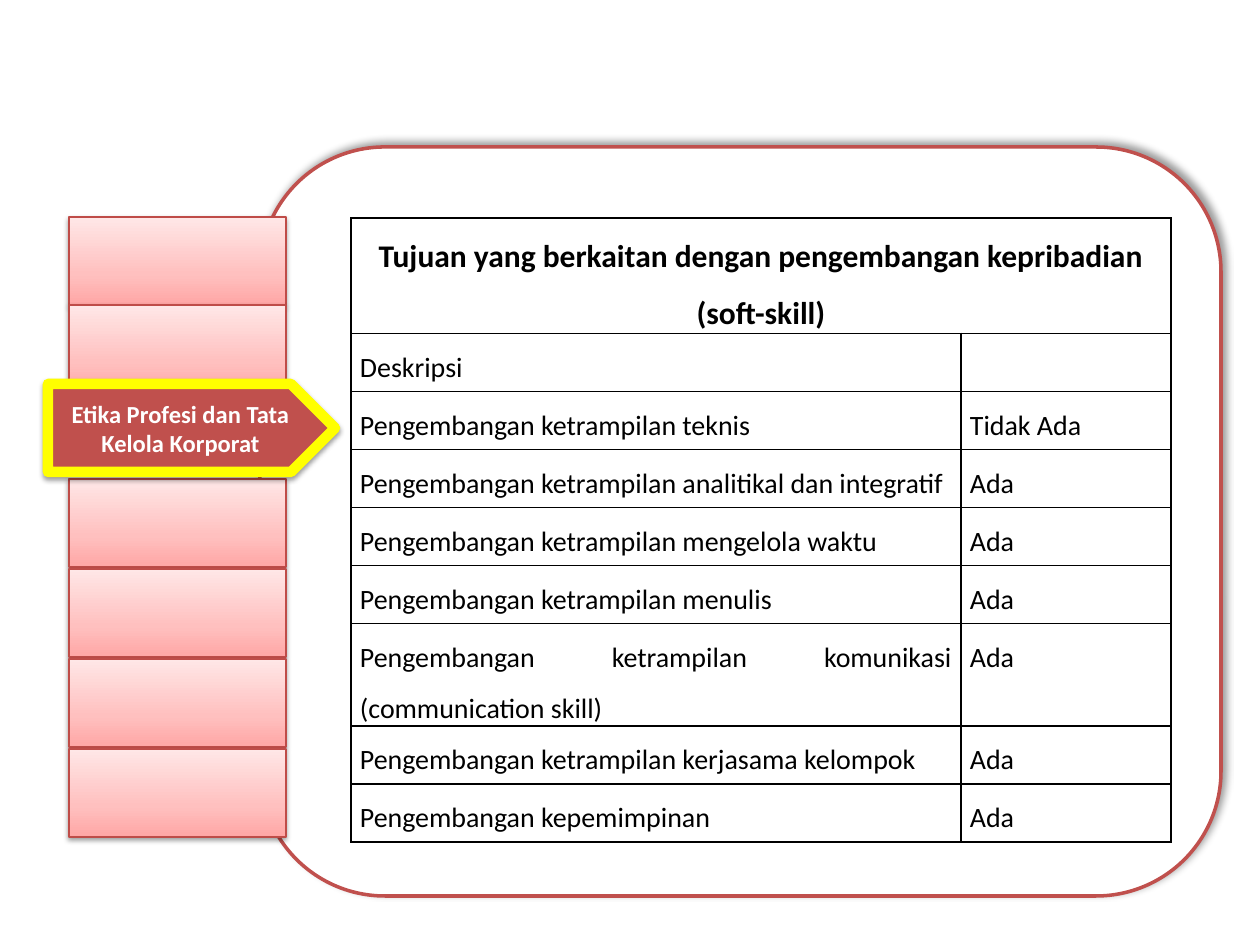
from copy import deepcopy

from pptx import Presentation
from pptx.dml.color import RGBColor
from pptx.enum.shapes import MSO_SHAPE
from pptx.enum.text import MSO_ANCHOR, PP_ALIGN
from pptx.oxml.ns import qn
from pptx.oxml import parse_xml
from pptx.util import Emu, Pt

ROUNDED, RECTANGLE, PENTAGON = (
    MSO_SHAPE.ROUNDED_RECTANGLE, MSO_SHAPE.RECTANGLE, MSO_SHAPE.PENTAGON)
CENTER, JUSTIFY = PP_ALIGN.CENTER, PP_ALIGN.JUSTIFY
MIDDLE = MSO_ANCHOR.MIDDLE

PX_PER_INCH = 126
FONT = "Calibri"
NAMESPACE = 'xmlns:a="http://schemas.openxmlformats.org/drawingml/2006/main"'
COLORS = {
    "white": "FFFFFF",
    "black": "000000",
    "red": "C0504D",
    "bar_line": "BF4C48",
    "highlight": "FFFF00",
}
BAR_GRADIENT = [(0, "FFA6A5"), (0.35, "FFC0BF"), (1, "FFE7E7")]

HEADING = "Tujuan yang berkaitan dengan pengembangan kepribadian (soft-skill)"
GOALS = [
    ("Deskripsi", ""),
    ("Pengembangan ketrampilan teknis", "Tidak Ada"),
    ("Pengembangan ketrampilan analitikal dan integratif", "Ada"),
    ("Pengembangan ketrampilan mengelola waktu", "Ada"),
    ("Pengembangan ketrampilan menulis", "Ada"),
    ("Pengembangan ketrampilan komunikasi (communication skill)", "Ada"),
    ("Pengembangan ketrampilan kerjasama kelompok", "Ada"),
    ("Pengembangan kepemimpinan", "Ada"),
]
COLUMN_WIDTHS = [610, 210]
ROW_HEIGHTS = [91, 58, 58, 58, 58, 58, 84, 58, 58]


def px(length):
    return Emu(round(length * 914400 / PX_PER_INCH))


def rgb(name):
    return RGBColor.from_string(COLORS[name])


def write_text(frame, text, size, color="black", bold=False, align=JUSTIFY,
               line_spacing=None):
    frame.word_wrap = True
    paragraph = frame.paragraphs[0]
    paragraph.alignment = align
    paragraph.line_spacing = line_spacing
    paragraph.font.size = Pt(size)
    if text:
        run = paragraph.add_run()
        run.text = text
        run.font.name = FONT
        run.font.size = Pt(size)
        run.font.bold = bold
        run.font.color.rgb = rgb(color)


def add_shadow(shape, opacity, blur, distance, angle):
    """Blur and distance are in points, opacity in percent, angle in degrees."""
    shape.shadow.inherit = False
    effects = shape._element.spPr.find(qn("a:effectLst"))
    effects.append(parse_xml(
        f'<a:outerShdw {NAMESPACE} blurRad="{Pt(blur)}" dist="{Pt(distance)}" '
        f'dir="{angle * 60000}" rotWithShape="0">'
        f'<a:srgbClr val="{COLORS["black"]}"><a:alpha val="{opacity * 1000}"/>'
        '</a:srgbClr></a:outerShdw>'))


def add_block(slide, kind, left, top, width, height, line, line_width,
              fill=None, shadow=(38, 3.1, 1.6, 90)):
    block = slide.shapes.add_shape(kind, px(left), px(top), px(width), px(height))
    if fill:
        block.fill.solid()
        block.fill.fore_color.rgb = rgb(fill)
    block.line.color.rgb = rgb(line)
    block.line.width = Pt(line_width)
    add_shadow(block, *shadow)
    return block


def add_bar(slide, top):
    bar = add_block(slide, RECTANGLE, 69, top, 217, 88, "bar_line", 0.75)
    bar.fill.gradient()
    bar.fill.gradient_angle = 90
    stop_list = bar._element.spPr.find(".//" + qn("a:gsLst"))
    stop_list.append(deepcopy(stop_list[0]))
    for stop, (position, color) in zip(bar.fill.gradient_stops, BAR_GRADIENT):
        stop.position = position
        stop.color.rgb = RGBColor.from_string(color)


def format_cell(cell):
    cell.margin_left = cell.margin_right = px(9)
    cell.margin_top = cell.margin_bottom = 0
    properties = cell._tc.get_or_add_tcPr()
    for side in "LRTB":
        properties.append(parse_xml(
            f'<a:ln{side} {NAMESPACE} w="{Pt(1)}"><a:solidFill>'
            f'<a:srgbClr val="{COLORS["black"]}"/></a:solidFill></a:ln{side}>'))
    cell.fill.background()


def add_goal_table(slide):
    table = slide.shapes.add_table(
        len(ROW_HEIGHTS), len(COLUMN_WIDTHS), px(351), px(218),
        px(sum(COLUMN_WIDTHS)), px(sum(ROW_HEIGHTS))).table
    table.first_row = table.horz_banding = False
    for column, width in zip(table.columns, COLUMN_WIDTHS):
        column.width = px(width)
    for row, height in zip(table.rows, ROW_HEIGHTS):
        row.height = px(height)
    for cell in table.iter_cells():
        format_cell(cell)

    heading = table.cell(0, 0)
    heading.merge(table.cell(0, 1))
    write_text(heading.text_frame, HEADING, size=18, bold=True, align=CENTER,
               line_spacing=1.5)
    for row, goal in enumerate(GOALS, start=1):
        for column, text in enumerate(goal):
            write_text(table.cell(row, column).text_frame, text, size=16,
                       line_spacing=1.5)


def main():
    presentation = Presentation()
    presentation.slide_width = px(1260)
    presentation.slide_height = px(945)
    slide = presentation.slides.add_slide(presentation.slide_layouts[6])

    add_block(slide, ROUNDED, 260, 147, 961, 749, "red", 2, fill="white",
              shadow=(40, 4, 3, 315))
    bars_above = [217 + 88 * i for i in range(2)]
    bars_below = [479 + 90 * i for i in range(4)]
    for top in bars_above + bars_below:
        add_bar(slide, top)

    topic = add_block(slide, PENTAGON, 48, 384, 287, 88, "highlight", 6, fill="red")
    topic.text_frame.vertical_anchor = MIDDLE
    write_text(topic.text_frame, "Etika Profesi dan Tata Kelola Korporat",
               size=14, color="white", bold=True, align=CENTER)
    add_goal_table(slide)
    presentation.save("out.pptx")


if __name__ == "__main__":
    main()
